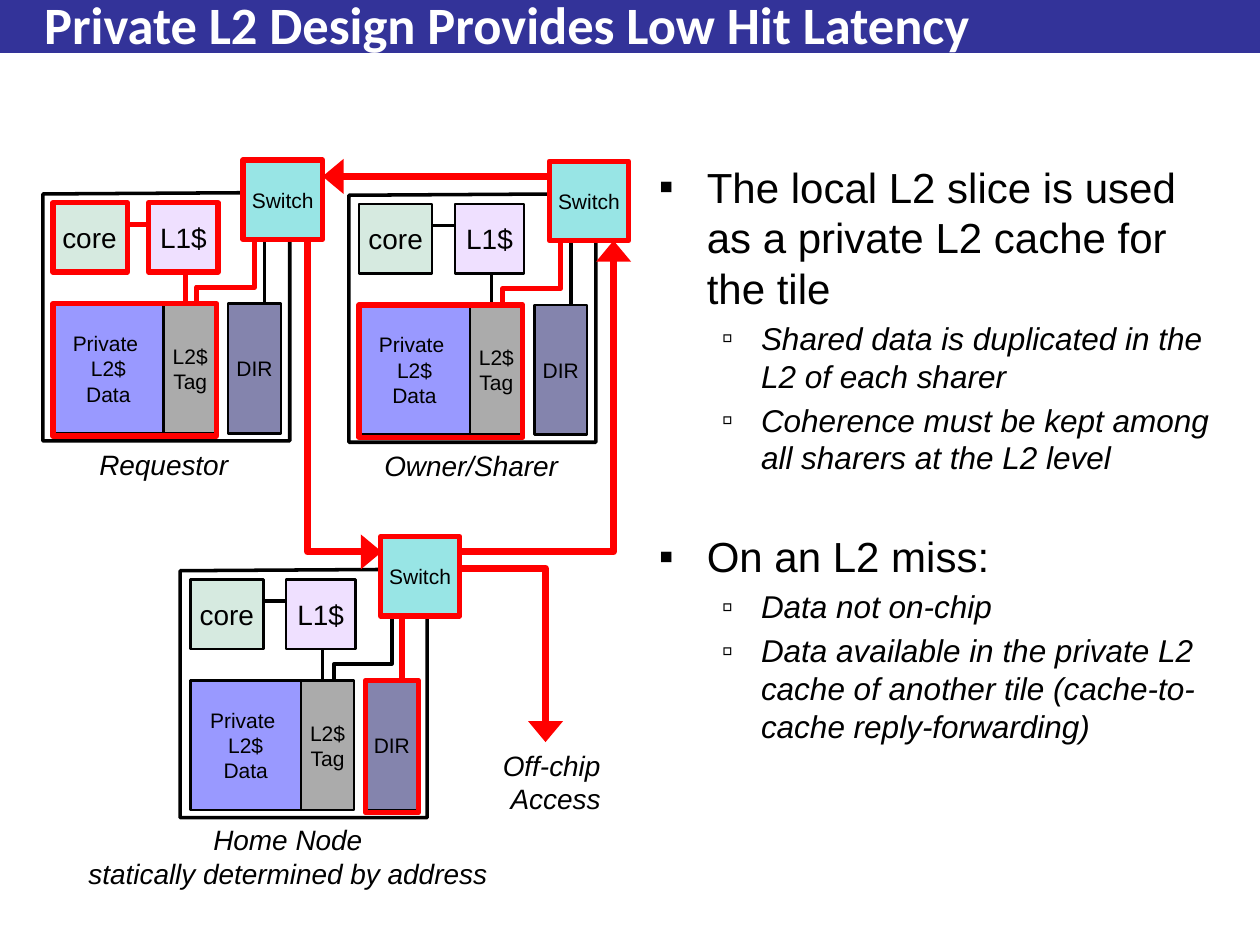
from lxml import etree
from pptx import Presentation
from pptx import util as u
from pptx.dml import color as dml
from pptx.enum import shapes, text
from pptx.oxml import ns

HUES = {
    "bar": "333399", "white": "FFFFFF", "black": "000000", "hot": "FF0000",
    "core": "339966", "cache": "CC99FF", "data": "9999FF",
    "switch": "33CCCC", "dir": "666699", "tag": "969696",
}
PARTS = {
    "core": ((0.08, 0.34, 0.58, 0.55), "core", "core", 20, 16),
    "l1": ((0.84, 0.34, 0.55, 0.55), "L1$", "cache", 30, 16),
    "data": ((0.08, 1.14, 0.88, 1.03), "Private \nL2$\nData", "data", 100, 12),
    "switch": ((1.59, 0, 0.63, 0.63), "Switch", "switch", 50, 12),
    "dir": ((1.47, 1.14, 0.42, 1.03), "DIR", "dir", 80, 12),
    "tag": ((0.96, 1.14, 0.42, 1.03), "L2$\nTag", "tag", 80, 12),
}
WIRES = {
    "core-l1": [(0.66, 0.51), (0.84, 0.51)],
    "l1-tag": [(1.13, 1.14), (1.13, 0.89)],
    "dir-switch": [(1.76, 1.14), (1.76, 0.63)],
    "tag-switch": [(1.22, 1.14), (1.22, 1.01), (1.68, 1.01), (1.68, 0.63)],
}
FRAME = [(1.59, 0.26), (0, 0.27), (0, 2.23), (1.96, 2.23), (1.96, 0.64)]
MARKS = {
    "core": (0.08, 0.34, 0.59, 0.55),
    "l1": PARTS["l1"][0],
    "l2": (0.08, 1.14, 1.3, 1.05),
    "dir": (1.47, 1.14, 0.42, 1.05),
    "switch": PARTS["switch"][0],
}
TILES = [
    ((0.34, 1.27), ["core", "l1", "l2", "switch"],
     ["core-l1", "l1-tag", "tag-switch"]),
    ((1.43, 4.26), ["dir", "switch"], ["dir-switch"]),
    ((2.77, 1.28), ["l2", "switch"], ["tag-switch"]),
]
PATHS = [
    [(4.37, 1.4), (2.56, 1.4)],
    [(2.44, 1.9), (2.44, 4.38), (3.03, 4.38)],
    [(3.66, 4.38), (4.87, 4.38), (4.87, 1.91)],
    [(3.66, 4.51), (4.33, 4.51), (4.33, 5.89)],
]
NOTES = [
    ((0.25, 6.48, 4.07, 0.64), "Home Node\nstatically determined by address"),
    ((2.86, 3.51, 1.76, 0.37), "Owner/Sharer"),
    ((0.42, 3.5, 1.76, 0.37), "Requestor"),
    ((3.53, 5.89, 1.76, 0.64), "Off-chip \nAccess"),
]
POINTS = [
    (0, 4.8, "The local L2 slice is used as a private L2 cache for the tile"),
    (1, 3.6, "Shared data is duplicated in the L2 of each sharer"),
    (1, 3.6, "Coherence must be kept among all sharers at the L2 level"),
    (0, 31, "On an L2 miss:"),
    (1, 3.6, "Data not on-chip"),
    (1, 3.6, "Data available in the private L2 cache of another tile "
             "(cache-to-cache reply-forwarding)"),
]
LEVELS = [("▪", 0.38, 0.38, 24, False), ("▫", 0.81, 0.31, 18, True)]


def hue(name):
    """Return the named colour."""
    return dml.RGBColor.from_string(HUES[name])


def inch(box):
    """Turn a run of numbers into lengths."""
    return [u.Inches(n) for n in box]


def shift(spot, base):
    """Move a point or box by the base point."""
    return (spot[0] + base[0], spot[1] + base[1], *spot[2:])


def write(frame, words, size=16, tint="black", face="Arial", bold=False,
          slant=False, align=text.PP_ALIGN.CENTER, more=False):
    """Write each line as a paragraph and return the last one."""
    for i, line in enumerate(words.split("\n")):
        para = frame.add_paragraph() if i or more else frame.paragraphs[0]
        para.alignment = align
        run = para.add_run()
        run.text = line
        font = run.font
        font.size, font.name = u.Pt(size), face
        font.bold, font.italic = bold, slant
        font.color.rgb = hue(tint)
    return para


def rect(slide, box, fill=None, alpha=100, line=None, width=1.5):
    """Add a flat rectangle with optional fill and line."""
    shape = slide.shapes.add_shape(shapes.MSO_SHAPE.RECTANGLE, *inch(box))
    shape.shadow.inherit = False
    if fill:
        shape.fill.solid()
        shape.fill.fore_color.rgb = hue(fill)
        if alpha < 100:
            tone = shape.element.spPr.find(".//" + ns.qn("a:srgbClr"))
            etree.SubElement(tone, ns.qn("a:alpha"), val=str(alpha * 1000))
    else:
        shape.fill.background()
    if line:
        shape.line.color.rgb = hue(line)
        shape.line.width = u.Pt(width)
    else:
        shape.line.fill.background()
    return shape


def wire(slide, spots, tint="black", width=2, arrow=False):
    """Draw a straight or bent line through the given points."""
    dots = [inch(spot) for spot in spots]
    if len(dots) == 2:
        shape = slide.shapes.add_connector(
            shapes.MSO_CONNECTOR.STRAIGHT, *dots[0], *dots[1])
    else:
        pen = slide.shapes.build_freeform(*dots[0])
        pen.add_line_segments(dots[1:], close=False)
        shape = pen.convert_to_shape()
        shape.fill.background()
    shape.line.color.rgb = hue(tint)
    shape.line.width = u.Pt(width)
    props = shape.element.spPr
    etree.SubElement(props, ns.qn("a:effectLst"))
    if arrow:
        etree.SubElement(props.find(ns.qn("a:ln")), ns.qn("a:tailEnd"),
                         type="triangle", w="lg", len="med")


def tile(slide, base):
    """Draw one tile with its parts and wires at the base point."""
    wire(slide, [shift(spot, base) for spot in FRAME])
    for spots in WIRES.values():
        wire(slide, [shift(spot, base) for spot in spots])
    for box, words, fill, alpha, size in PARTS.values():
        shape = rect(slide, shift(box, base), fill, alpha, "black")
        frame = shape.text_frame
        frame.word_wrap = False
        frame.vertical_anchor = text.MSO_ANCHOR.MIDDLE
        write(frame, words, size)


def mark(slide, base, parts, wires):
    """Outline the active parts and wires of a tile."""
    for name in parts:
        rect(slide, shift(MARKS[name], base), line="hot", width=3)
    for name in wires:
        wire(slide, [shift(spot, base) for spot in WIRES[name]], "hot", 3)


def note(slide, box, words):
    """Add a slanted, centred caption."""
    frame = slide.shapes.add_textbox(*inch(box)).text_frame
    frame.word_wrap = True
    write(frame, words, slant=True)


def place(shape, box, anchor):
    """Move a placeholder to the box and return its text frame."""
    shape.left, shape.top, shape.width, shape.height = inch(box)
    frame = shape.text_frame
    frame.word_wrap = True
    frame.auto_size = text.MSO_AUTO_SIZE.NONE
    frame.vertical_anchor = anchor
    return frame


def head(slide, box):
    """Lay the title over a bar that fills the box."""
    title = slide.shapes.title
    title.element.addprevious(rect(slide, box, "bar").element)
    frame = place(title, (box[0] + 0.25, box[1] + 0.05, 9.25, 0.28),
                  text.MSO_ANCHOR.MIDDLE)
    write(frame, "Private L2 Design Provides Low Hit Latency", 30, "white",
          "Calibri", bold=True, align=text.PP_ALIGN.LEFT)


def points(slide, box):
    """Fill the body with the two-level list."""
    frame = place(slide.placeholders[1], box, text.MSO_ANCHOR.TOP)
    for i, (level, gap, words) in enumerate(POINTS):
        sign, left, hang, size, slant = LEVELS[level]
        para = write(frame, words, size, slant=slant,
                     align=text.PP_ALIGN.LEFT, more=i > 0)
        para.level = level
        para.space_before = u.Pt(gap)
        props = para._p.get_or_add_pPr()
        props.set("marL", str(u.Inches(left)))
        props.set("indent", str(-u.Inches(hang)))
        tone = etree.SubElement(props, ns.qn("a:buClr"))
        etree.SubElement(tone, ns.qn("a:srgbClr"), val=HUES["black"])
        etree.SubElement(props, ns.qn("a:buFont"), typeface="Arial")
        etree.SubElement(props, ns.qn("a:buChar"), char=sign)


def main():
    """Build the slide and save it."""
    deck = Presentation()
    deck.slide_width, deck.slide_height = inch((10, 7.5))
    slide = deck.slides.add_slide(deck.slide_layouts[1])
    head(slide, (0, 0, 10, 0.42))
    for base, _, _ in TILES:
        tile(slide, base)
    for box, words in NOTES:
        note(slide, box, words)
    for base, parts, wires in TILES:
        mark(slide, base, parts, wires)
    for spots in PATHS:
        wire(slide, spots, "hot", 4, arrow=True)
    points(slide, (5.13, 1.23, 4.66, 5.59))
    deck.save("out.pptx")


if __name__ == "__main__":
    main()
